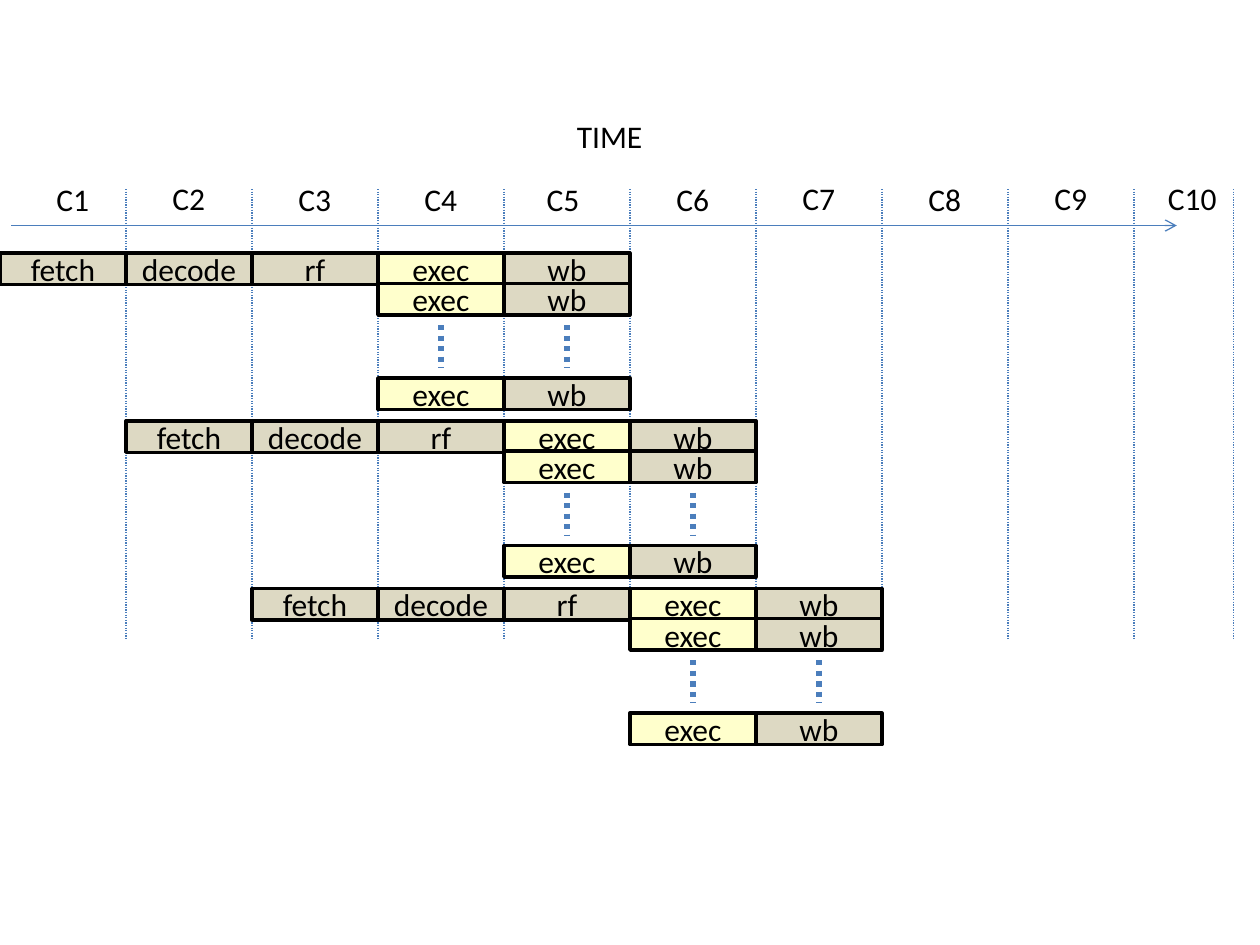
from dataclasses import dataclass
from typing import Any

from lxml import etree
from pptx import Presentation
from pptx.dml.color import RGBColor
from pptx.enum.dml import MSO_LINE
from pptx.enum.shapes import MSO_CONNECTOR, MSO_SHAPE
from pptx.enum.text import MSO_ANCHOR, MSO_AUTO_SIZE, PP_ALIGN
from pptx.oxml.ns import qn
from pptx.util import Inches, Pt

RECT = MSO_SHAPE.RECTANGLE
LINE = MSO_CONNECTOR.STRAIGHT
DOTS = MSO_LINE.ROUND_DOT
MIDDLE = MSO_ANCHOR.MIDDLE
GROW = MSO_AUTO_SIZE.SHAPE_TO_FIT_TEXT
LEFT = PP_ALIGN.LEFT
CENTER = PP_ALIGN.CENTER


def paint(fmt, color):
    fmt.solid()
    fmt.fore_color.rgb = RGBColor.from_string(color)


def write(frame, text, font="Calibri", size=18, color="000000", align=LEFT):
    para = frame.paragraphs[0]
    para.alignment = align
    run = para.add_run()
    run.text = text
    run.font.name = font
    run.font.size = Pt(size)
    paint(run.font.fill, color)


@dataclass
class Chart:
    slide: Any
    ink: str = "000000"
    blue: str = "4B7EBC"
    tan: str = "DDD9C3"
    cream: str = "FFFFCC"
    high: float = 0.25

    def line(self, start, end, width=0.75, dash=None, arrow=False):
        ends = [Inches(value) for value in (*start, *end)]
        shape = self.slide.shapes.add_connector(LINE, *ends)
        paint(shape.line.fill, self.blue)
        shape.line.width = Pt(width)
        if dash:
            shape.line.dash_style = dash
        if arrow:
            tail = etree.SubElement(shape.line.fill._xPr, qn("a:tailEnd"))
            tail.set("type", "arrow")
        etree.SubElement(shape._element.spPr, qn("a:effectLst"))

    def label(self, text, left, top, width):
        box = self.slide.shapes.add_textbox(
            Inches(left), Inches(top), Inches(width), Inches(0.4))
        box.text_frame.word_wrap = False
        box.text_frame.auto_size = GROW
        write(box.text_frame, text)

    def stage(self, name, left, top):
        box = self.slide.shapes.add_shape(
            RECT, Inches(left), Inches(top), Inches(1), Inches(self.high))
        box.shadow.inherit = False
        paint(box.fill, self.cream if name == "exec" else self.tan)
        paint(box.line.fill, self.ink)
        box.line.width = Pt(2)
        box.text_frame.word_wrap = True
        box.text_frame.vertical_anchor = MIDDLE
        write(box.text_frame, name, align=CENTER)

    def group(self, left, top):
        for step, name in enumerate(("fetch", "decode", "rf", "exec", "wb")):
            self.stage(name, left + step, top)
        for step, name in enumerate(("exec", "wb"), 3):
            for drop in (0.24, 0.99):
                self.stage(name, left + step, top + drop)
            mid = left + step + 0.5
            self.line((mid, top + 0.57), (mid, top + 0.91), width=3, dash=DOTS)


def main():
    deck = Presentation()
    deck.slide_width = Inches(10)
    deck.slide_height = Inches(7.5)
    chart = Chart(deck.slides.add_slide(deck.slide_layouts[6]))

    chart.line((0.09, 1.79), (9.34, 1.79), arrow=True)
    chart.label("TIME", 4.48, 0.88, 0.73)
    for left in (*range(1, 10), 9.79):
        chart.line((left, 1.5), (left, 5.08), dash=DOTS)

    shift = {1: 0.35, 5: 4.24, 10: 9.17}
    raised = (2, 7, 9, 10)
    for cycle in range(1, 11):
        left = shift.get(cycle, cycle - 0.73)
        top = 1.37 if cycle in raised else 1.38
        chart.label(f"C{cycle}", left, top, 0.59 if cycle == 10 else 0.46)

    for row in range(3):
        chart.group(row, 2.01 + 1.33 * row)

    deck.save("out.pptx")


if __name__ == "__main__":
    main()
